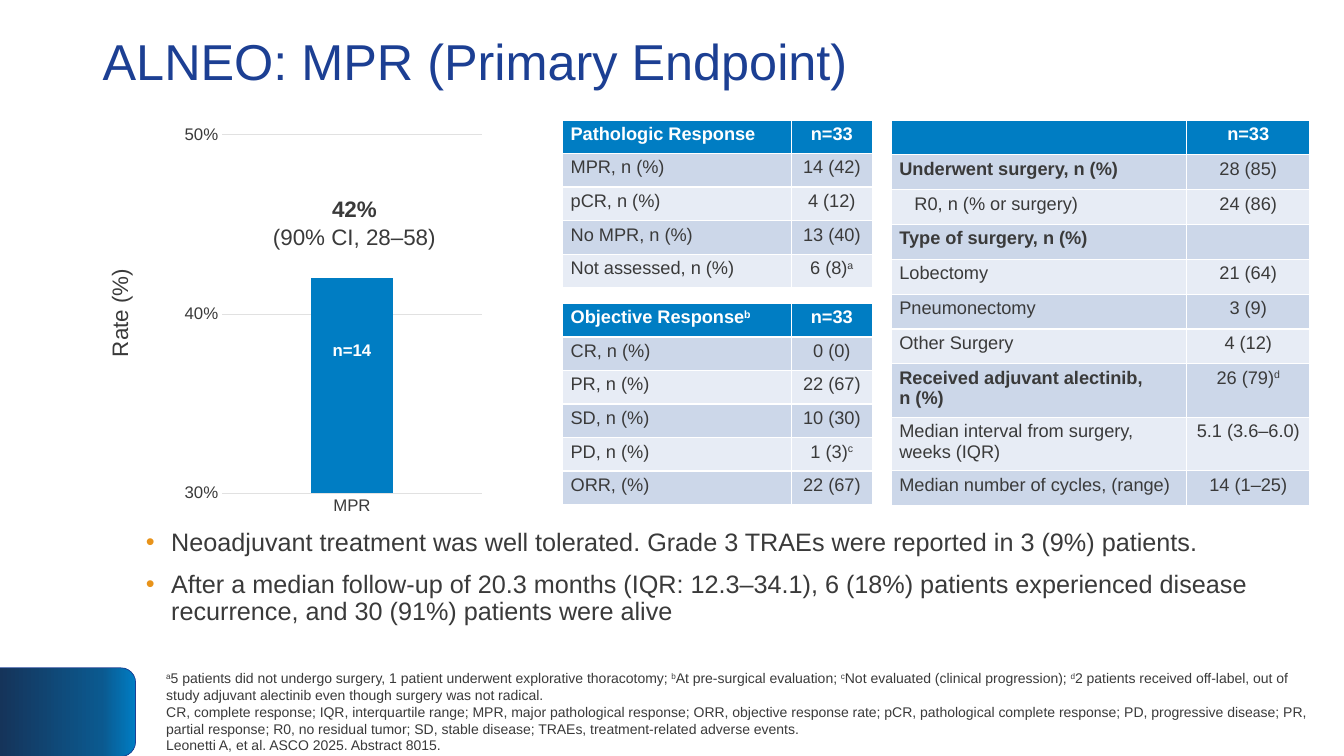
import copy
import pptx
import pptx.chart.data
import pptx.dml.color
import pptx.enum.chart
import pptx.enum.shapes
import pptx.enum.text
import pptx.oxml
import pptx.oxml.ns
import pptx.util
from lxml import etree

Inches = pptx.util.Inches
Pt = pptx.util.Pt
RGBColor = pptx.dml.color.RGBColor
qn = pptx.oxml.ns.qn
Align = pptx.enum.text.PP_ALIGN
Anchor = pptx.enum.text.MSO_ANCHOR

NAVY = RGBColor(0x1C, 0x3F, 0x93)
BLUE = RGBColor(0x00, 0x7D, 0xC3)
MID = RGBColor(0x0B, 0x59, 0x8F)
DARK = RGBColor(0x15, 0x34, 0x5A)
INK = RGBColor(0x3A, 0x3A, 0x3A)
WHITE = RGBColor(0xFF, 0xFF, 0xFF)
GRID = RGBColor(0xE1, 0xE1, 0xE1)
BANDS = [RGBColor(0xE7, 0xEC, 0xF5), RGBColor(0xCC, 0xD7, 0xE9)]


def write(frame, text, size=12, color=INK, bold=False, align=None,
          space=None, gap=0, bullet=None):
    # placeholder-free text: "^x" raises x
    for i, line in enumerate(text.split("\n")):
        para = frame.add_paragraph() if i else frame.paragraphs[0]
        if bullet:
            props = para._p.get_or_add_pPr()
            props.set("marL", str(Inches(0.25)))
            props.set("indent", str(-Inches(0.25)))
            tint = etree.SubElement(props, qn("a:buClr"))
            etree.SubElement(tint, qn("a:srgbClr"), val=bullet)
            etree.SubElement(props, qn("a:buFont"), typeface="Arial")
            etree.SubElement(props, qn("a:buChar"), char="•")
        para.alignment = align
        para.line_spacing = space
        if i and gap:
            para.space_before = Pt(gap)
        first, *marks = line.split("^")
        parts = [(first, False)]
        for mark in marks:
            parts += [(mark[0], True), (mark[1:], False)]
        for words, high in parts:
            if not words:
                continue
            run = para.add_run()
            run.text = words
            run.font.name = "Arial"
            run.font.size = Pt(size)
            run.font.bold = bold
            run.font.color.rgb = color
            if high:
                run.font._element.set("baseline", "30000")
        if not line:
            etree.SubElement(para._p, qn("a:endParaRPr"), sz=str(size * 100))


deck = pptx.Presentation()
deck.slide_width = Inches(13.33)
deck.slide_height = Inches(7.5)
slide = deck.slides.add_slide(deck.slide_layouts[6])
shapes = slide.shapes

tab = shapes.add_shape(pptx.enum.shapes.MSO_SHAPE.ROUND_2_SAME_RECTANGLE,
                       Inches(0.23), Inches(6.39), Inches(0.88), Inches(1.35))
tab.rotation = 90
tab.shadow.inherit = False
tab.line.color.rgb = NAVY
tab.line.width = Pt(0.5)
tab.fill.gradient()
tab.fill.gradient_angle = 270
stops = tab._element.spPr.find(".//" + qn("a:gsLst"))
stops.append(copy.deepcopy(stops[0]))
for stop, spot, color in zip(tab.fill.gradient_stops, (0, 0.25, 1), (BLUE, MID, DARK)):
    stop.position = spot
    stop.color.rgb = color

data = pptx.chart.data.CategoryChartData(number_format="0%")
data.categories = ["MPR"]
data.add_series("Series 1", [0.42])
chart = shapes.add_chart(pptx.enum.chart.XL_CHART_TYPE.COLUMN_CLUSTERED,
                         Inches(1.77), Inches(1.17), Inches(3.07), Inches(4.02), data).chart
chart.has_title = False
chart.has_legend = False
chart.font.name = "Arial"
chart.font.size = Pt(12)
chart.font.color.rgb = INK
plot = chart.plots[0]
plot.vary_by_categories = False
plot.gap_width = 219
plot.overlap = -27
bar = plot.series[0].format.fill
bar.solid()
bar.fore_color.rgb = BLUE
rate = chart.value_axis
rate.minimum_scale = 0.3
rate.maximum_scale = 0.5
rate.major_unit = 0.1
rate.tick_labels.number_format = "0%"
rate.tick_labels.number_format_is_linked = False
rate.format.line.fill.background()
for axis in (rate, chart.category_axis):
    axis.major_tick_mark = pptx.enum.chart.XL_TICK_MARK.NONE
for line in (rate.major_gridlines.format.line, chart.category_axis.format.line):
    line.color.rgb = GRID
    line.width = Pt(0.75)

path_rows = [
    ("Pathologic Response", "n=33"),
    ("MPR, n (%)", "14 (42)"),
    ("pCR, n (%)", "4 (12)"),
    ("No MPR, n (%)", "13 (40)"),
    ("Not assessed, n (%)", "6 (8)^a"),
]
goal_rows = [
    ("Objective Response^b", "n=33"),
    ("CR, n (%)", "0 (0)"),
    ("PR, n (%)", "22 (67)"),
    ("SD, n (%)", "10 (30)"),
    ("PD, n (%)", "1 (3)^c"),
    ("ORR, (%)", "22 (67)"),
]
care_rows = [
    ("", "n=33"),
    ("Underwent surgery, n (%)", "28 (85)"),
    ("R0, n (% or surgery)", "24 (86)"),
    ("Type of surgery, n (%)", ""),
    ("Lobectomy", "21 (64)"),
    ("Pneumonectomy", "3 (9)"),
    ("Other Surgery", "4 (12)"),
    ("Received adjuvant alectinib,\nn (%)", "26 (79)^d"),
    ("Median interval from surgery, weeks (IQR)", "5.1 (3.6–6.0)"),
    ("Median number of cycles, (range)", "14 (1–25)"),
]
heavy = ("Underwent", "Type of", "Received")
tall = ("Received", "Median interval")

for left, top, wides, high, rows in [
    (5.58, 1.19, (2.27, 0.8), 0.333, path_rows),
    (5.58, 3.01, (2.27, 0.8), 0.333, goal_rows),
    (8.84, 1.19, (2.93, 1.22), 0.346, care_rows),
]:
    table = shapes.add_table(len(rows), 2, Inches(left), Inches(top),
                             Inches(sum(wides)), Inches(high * len(rows))).table
    for col, wide in zip(table.columns, wides):
        col.width = Inches(wide)
    for r, row in enumerate(rows):
        table.rows[r].height = Inches(0.53 if row[0].startswith(tall) else high)
        for c, text in enumerate(row):
            cell = table.cell(r, c)
            cell.margin_left = Inches(0.23 if text.startswith("R0") else 0.08)
            cell.margin_right = Inches(0.08)
            cell.margin_top = cell.margin_bottom = Inches(0.04)
            for side in ("a:lnL", "a:lnR", "a:lnT", "a:lnB"):
                edge = etree.SubElement(cell._tc.get_or_add_tcPr(), qn(side), w=str(Pt(1)))
                fill = etree.SubElement(edge, qn("a:solidFill"))
                etree.SubElement(fill, qn("a:srgbClr"), val=str(WHITE))
            cell.fill.solid()
            cell.fill.fore_color.rgb = BANDS[r % 2] if r else BLUE
            write(cell.text_frame, text, size=13, color=INK if r else WHITE,
                  bold=r == 0 or text.startswith(heavy),
                  align=Align.CENTER if c else None)

notes = (
    "^a5 patients did not undergo surgery, 1 patient underwent explorative thoracotomy; "
    "^bAt pre-surgical evaluation; ^cNot evaluated (clinical progression); "
    "^d2 patients received off-label, out of study adjuvant alectinib even though "
    "surgery was not radical.\n"
    "CR, complete response; IQR, interquartile range; MPR, major pathological response; "
    "ORR, objective response rate; pCR, pathological complete response; "
    "PD, progressive disease; PR, partial response; R0, no residual tumor; "
    "SD, stable disease; TRAEs, treatment-related adverse events.\n"
    "Leonetti A, et al. ASCO 2025. Abstract 8015."
)
points = (
    "Neoadjuvant treatment was well tolerated. Grade 3 TRAEs were reported in 3 (9%) patients.\n"
    "After a median follow-up of 20.3 months (IQR: 12.3–34.1), 6 (18%) patients "
    "experienced disease recurrence, and 30 (91%) patients were alive"
)
for left, top, wide, high, text, anchor, turn, style in [
    (0.92, 0.22, 11.5, 0.84, "ALNEO: MPR (Primary Endpoint)", Anchor.MIDDLE, 0,
     dict(size=36, color=NAVY, space=0.9)),
    (1.35, 5.21, 11.5, 1.57, points, Anchor.TOP, 0,
     dict(size=18, space=0.9, gap=10, bullet="E8931A")),
    (1.55, 6.62, 11.65, 0.88, notes, Anchor.MIDDLE, 0, dict(size=10)),
    (0.64, 2.91, 1.09, 0.37, "Rate (%)", Anchor.TOP, 270, dict(size=16)),
    (3.2, 3.32, 0.63, 0.3, "n=14", Anchor.TOP, 0, dict(color=WHITE, bold=True)),
    (2.6, 1.89, 1.83, 0.35, "42%", Anchor.TOP, 0,
     dict(size=16, bold=True, align=Align.CENTER)),
    (2.6, 2.16, 1.83, 0.37, "(90% CI, 28–58)", Anchor.TOP, 0,
     dict(size=16, align=Align.CENTER)),
]:
    box = shapes.add_textbox(Inches(left), Inches(top), Inches(wide), Inches(high))
    box.rotation = turn
    box.text_frame.word_wrap = turn == 0
    box.text_frame.vertical_anchor = anchor
    write(box.text_frame, text, **style)

deck.save("out.pptx")
